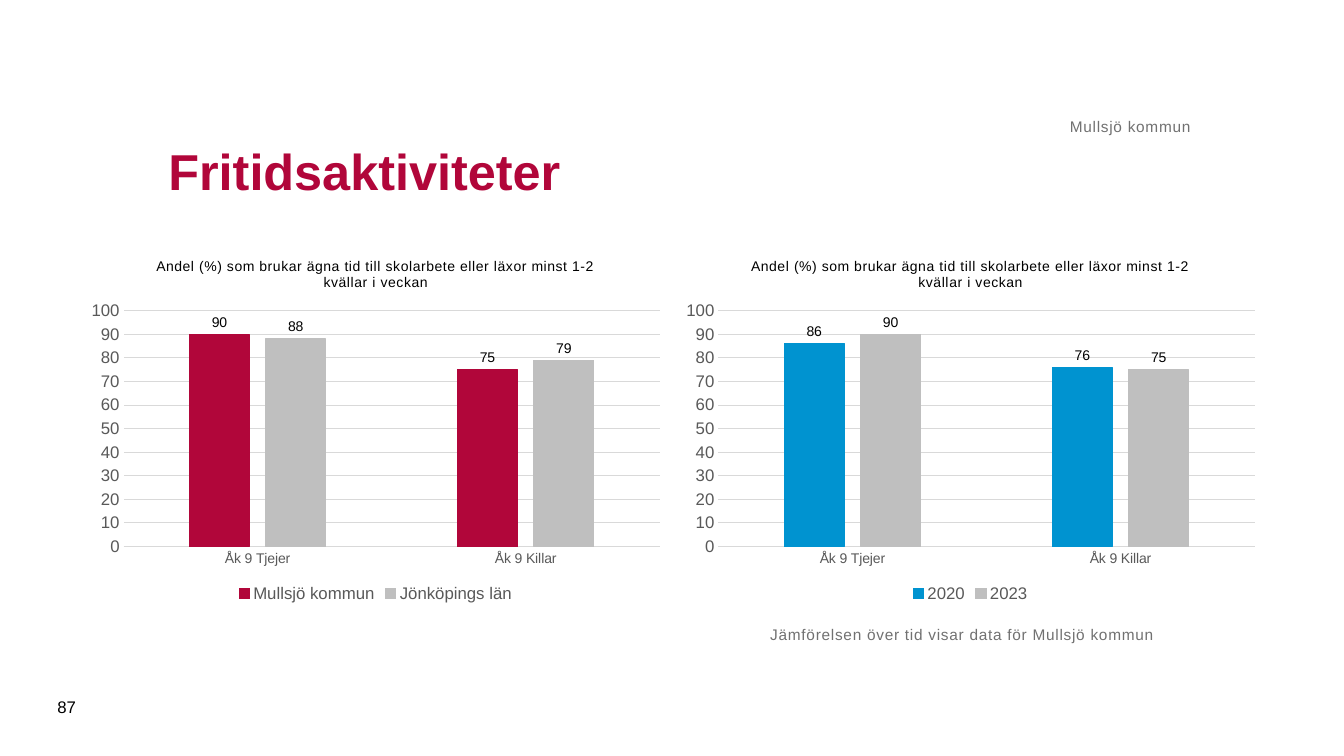
from dataclasses import dataclass

from pptx import Presentation
from pptx.chart.chart import Chart
from pptx.chart.data import CategoryChartData
from pptx.dml.color import RGBColor
from pptx.enum.chart import (XL_CHART_TYPE, XL_LABEL_POSITION,
                             XL_LEGEND_POSITION, XL_TICK_MARK)
from pptx.enum.text import MSO_ANCHOR, PP_ALIGN
from pptx.text.text import Font, _Run
from pptx.util import Inches, Pt

FONT = "Arial"
CRIMSON = RGBColor(0xB1, 0x06, 0x3A)
BLUE = RGBColor(0x00, 0x93, 0xD0)
SILVER = RGBColor(0xBF, 0xBF, 0xBF)
GRID_GRAY = RGBColor(0xD9, 0xD9, 0xD9)
AXIS_GRAY = RGBColor(0x59, 0x59, 0x59)
NOTE_GRAY = RGBColor(0x71, 0x71, 0x71)
BLACK = RGBColor(0x00, 0x00, 0x00)

PAGE_WIDTH, PAGE_HEIGHT = Inches(13.33), Inches(7.5)
NUMBER_FORMAT = "#,##0;#,##0"
CATEGORIES = ("Åk 9 Tjejer", "Åk 9 Killar")
QUESTION = ("Andel (%) som brukar ägna tid till skolarbete eller läxor "
            "minst 1-2 kvällar i veckan")


@dataclass(frozen=True)
class Area:
    """A rectangle in percent of the slide's width and height."""
    left: float
    top: float
    width: float
    height: float

    def lengths(self) -> tuple[int, int, int, int]:
        return (int(PAGE_WIDTH * self.left / 100), int(PAGE_HEIGHT * self.top / 100),
                int(PAGE_WIDTH * self.width / 100), int(PAGE_HEIGHT * self.height / 100))


@dataclass(frozen=True)
class Bars:
    name: str
    values: tuple[int, int]
    color: RGBColor


@dataclass(frozen=True)
class Panel:
    area: Area
    series: tuple[Bars, Bars]


@dataclass(frozen=True)
class Label:
    text: str
    area: Area
    size: int
    color: RGBColor
    anchor: MSO_ANCHOR = MSO_ANCHOR.TOP
    align: PP_ALIGN = PP_ALIGN.LEFT
    inset: float = 0
    spacing: float = 0


TITLE_AREA = Area(11.78, 13.07, 76.82, 18.93)
PANELS = (
    Panel(Area(5.93, 32, 44.04, 48.27),
          (Bars("Mullsjö kommun", (90, 75), CRIMSON),
           Bars("Jönköpings län", (88, 79), SILVER))),
    Panel(Area(50.19, 32, 44.04, 48.27),
          (Bars("2020", (86, 76), BLUE),
           Bars("2023", (90, 75), SILVER))),
)
LABELS = (
    Label("Mullsjö kommun", Area(11.78, 8.27, 76.82, 9.73), 11, NOTE_GRAY,
          MSO_ANCHOR.BOTTOM, PP_ALIGN.RIGHT, spacing=0.5),
    Label("87", Area(3.53, 90.8, 4.28, 5.33), 12, BLACK,
          MSO_ANCHOR.MIDDLE, inset=0.1),
    Label("Jämförelsen över tid visar data för Mullsjö kommun",
          Area(57.31, 82.67, 39.83, 12.53), 11, NOTE_GRAY, spacing=0.5),
)


def style_font(font: Font, size: int, color: RGBColor, bold: bool = False) -> None:
    font.name = FONT
    font.size = Pt(size)
    font.bold = bold
    font.color.rgb = color


def space_letters(span: _Run, points: float) -> None:
    span._r.get_or_add_rPr().set("spc", str(round(points * 100)))


def add_title(page, text: str) -> None:
    box = page.shapes.title
    box.left, box.top, box.width, box.height = TITLE_AREA.lengths()
    frame = box.text_frame
    frame.text = text
    frame.vertical_anchor = MSO_ANCHOR.MIDDLE
    para = frame.paragraphs[0]
    para.alignment = PP_ALIGN.LEFT
    style_font(para.runs[0].font, 36, CRIMSON, bold=True)


def add_label(page, label: Label) -> None:
    frame = page.shapes.add_textbox(*label.area.lengths()).text_frame
    frame.word_wrap = True
    frame.vertical_anchor = label.anchor
    frame.margin_left = frame.margin_right = Inches(label.inset)
    frame.margin_top = frame.margin_bottom = Inches(label.inset / 2)
    frame.text = label.text
    para = frame.paragraphs[0]
    para.alignment = label.align
    style_font(para.runs[0].font, label.size, label.color)
    if label.spacing:
        space_letters(para.runs[0], label.spacing)


def style_axes(chart: Chart) -> None:
    categories, values = chart.category_axis, chart.value_axis
    for axis, size in ((categories, 10), (values, 12)):
        axis.major_tick_mark = axis.minor_tick_mark = XL_TICK_MARK.NONE
        style_font(axis.tick_labels.font, size, AXIS_GRAY)
    values.minimum_scale, values.maximum_scale = 0, 100
    values.tick_labels.number_format = NUMBER_FORMAT
    values.tick_labels.number_format_is_linked = False
    values.format.line.fill.background()
    values.has_major_gridlines = True
    for line in (categories.format.line, values.major_gridlines.format.line):
        line.color.rgb = GRID_GRAY
        line.width = Pt(0.75)


def style_series(chart: Chart, panel: Panel) -> None:
    plot = chart.plots[0]
    plot.gap_width, plot.overlap = 219, -27
    plot.vary_by_categories = False
    for series, bars in zip(plot.series, panel.series):
        series.format.fill.solid()
        series.format.fill.fore_color.rgb = bars.color
        series.format.line.color.rgb = bars.color
        series.format.line.width = Pt(0.75)
        series.invert_if_negative = False
        labels = series.data_labels
        labels.show_value = True
        labels.position = XL_LABEL_POSITION.OUTSIDE_END
        labels.number_format = NUMBER_FORMAT
        labels.number_format_is_linked = False
        style_font(labels.font, 10, BLACK)


def add_panel(page, panel: Panel) -> None:
    data = CategoryChartData(number_format=NUMBER_FORMAT)
    data.categories = CATEGORIES
    for bars in panel.series:
        data.add_series(bars.name, bars.values)
    chart = page.shapes.add_chart(
        XL_CHART_TYPE.COLUMN_CLUSTERED, *panel.area.lengths(), data).chart
    style_font(chart.font, 10, BLACK)
    chart.has_title = True
    chart.chart_title.include_in_layout = False
    frame = chart.chart_title.text_frame
    frame.text = QUESTION
    span = frame.paragraphs[0].runs[0]
    style_font(span.font, 10, BLACK)
    space_letters(span, 0.5)
    chart.has_legend = True
    chart.legend.position = XL_LEGEND_POSITION.BOTTOM
    chart.legend.include_in_layout = False
    style_font(chart.legend.font, 12, AXIS_GRAY)
    style_axes(chart)
    style_series(chart, panel)


def main() -> None:
    deck = Presentation()
    deck.slide_width, deck.slide_height = PAGE_WIDTH, PAGE_HEIGHT
    page = deck.slides.add_slide(deck.slide_layouts.get_by_name("Title Only"))
    for panel in PANELS:
        add_panel(page, panel)
    add_title(page, "Fritidsaktiviteter")
    for label in LABELS:
        add_label(page, label)
    deck.save("out.pptx")


if __name__ == "__main__":
    main()
